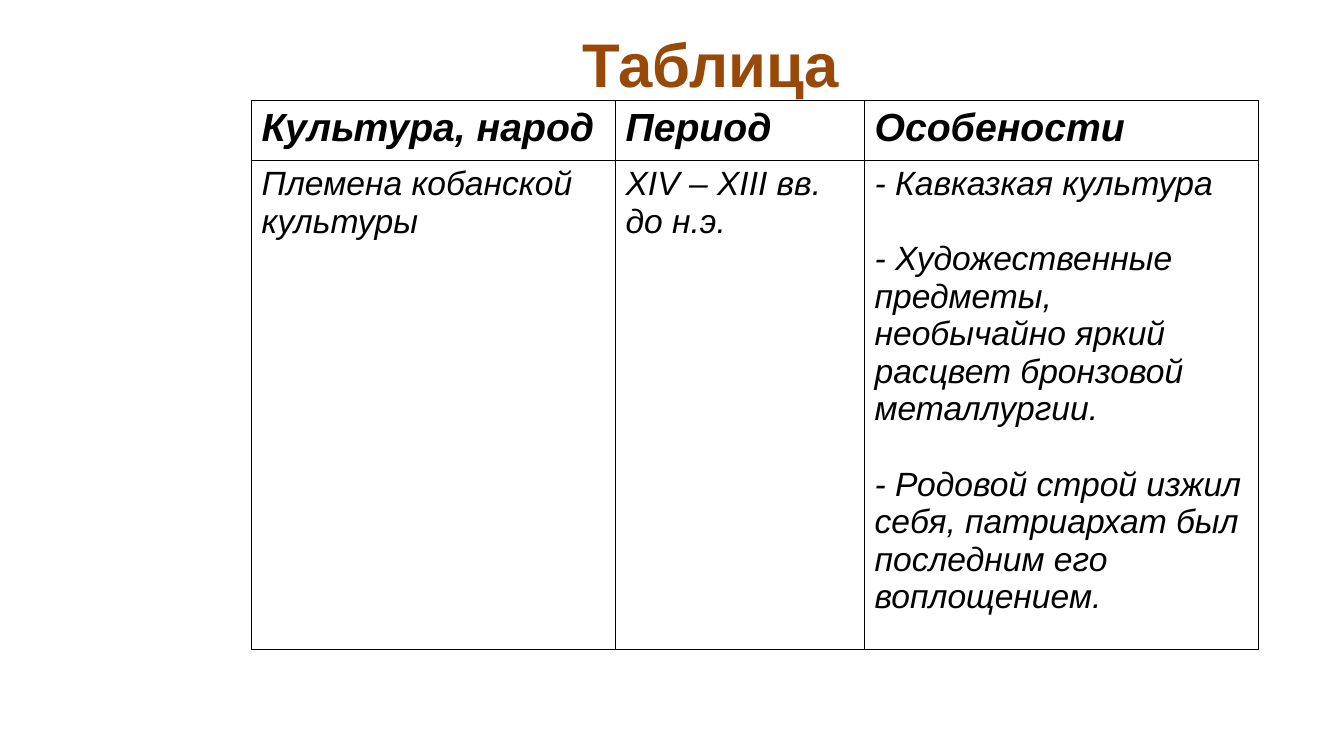
import pptx
import pptx.dml.color
import pptx.enum.text
import pptx.oxml.ns
import pptx.util
from lxml import etree

BLACK = pptx.dml.color.RGBColor(0x00, 0x00, 0x00)
BROWN = pptx.dml.color.RGBColor(0x98, 0x48, 0x07)

HEADERS = ["Культура, народ", "Период", "Особености"]
CULTURES = [
    [
        ["Племена кобанской культуры"],
        ["XIV – XIII вв. до н.э."],
        [
            "- Кавказкая культура",
            "- Художественные предметы, необычайно яркий расцвет бронзовой металлургии.",
            "- Родовой строй изжил себя, патриархат был последним его воплощением.",
        ],
    ],
]


class CultureSlide:
    font_name = "Arial"
    title_size = 44
    header_size = 28
    body_size = 24
    paragraph_gap = 27
    border_width = 1

    def __init__(self, presentation):
        self.width = presentation.slide_width
        self.height = presentation.slide_height
        self.slide = presentation.slides.add_slide(presentation.slide_layouts[6])

    def across(self, share):
        return round(self.width * share / 100)

    def down(self, share):
        return round(self.height * share / 100)

    def fill_text(self, text_frame, lines, size, color, bold=False, italic=False):
        text_frame.text = "\n".join(lines)
        for position, paragraph in enumerate(text_frame.paragraphs):
            if position:
                paragraph.space_before = pptx.util.Pt(self.paragraph_gap)
            for run in paragraph.runs:
                run.font.name = self.font_name
                run.font.size = pptx.util.Pt(size)
                run.font.bold = bold
                run.font.italic = italic
                run.font.color.rgb = color

    def title(self, text, left, top, width, height):
        box = self.slide.shapes.add_textbox(
            self.across(left), self.down(top), self.across(width), self.down(height)
        )
        text_frame = box.text_frame
        text_frame.word_wrap = True
        text_frame.vertical_anchor = pptx.enum.text.MSO_ANCHOR.MIDDLE
        self.fill_text(text_frame, [text], self.title_size, BROWN, bold=True)
        text_frame.paragraphs[0].alignment = pptx.enum.text.PP_ALIGN.CENTER

    def border(self, cell):
        qualified = pptx.oxml.ns.qn
        properties = cell._tc.get_or_add_tcPr()
        for side in ("a:lnL", "a:lnR", "a:lnT", "a:lnB"):
            line = etree.SubElement(properties, qualified(side))
            line.set("w", str(pptx.util.Pt(self.border_width)))
            fill = etree.SubElement(line, qualified("a:solidFill"))
            etree.SubElement(fill, qualified("a:srgbClr")).set("val", str(BLACK))

    def table(self, headers, records, left, top, column_shares, row_shares):
        rows = [[[header] for header in headers], *records]
        table = self.slide.shapes.add_table(
            len(rows),
            len(headers),
            self.across(left),
            self.down(top),
            self.across(sum(column_shares)),
            self.down(sum(row_shares)),
        ).table
        for column, share in zip(table.columns, column_shares):
            column.width = self.across(share)
        for row, share in zip(table.rows, row_shares):
            row.height = self.down(share)
        for row_number, row in enumerate(rows):
            is_header = row_number == 0
            size = self.header_size if is_header else self.body_size
            for column_number, lines in enumerate(row):
                cell = table.cell(row_number, column_number)
                self.border(cell)
                cell.fill.background()
                self.fill_text(cell.text_frame, lines, size, BLACK, is_header, True)


def main():
    presentation = pptx.Presentation()
    presentation.slide_width = pptx.util.Inches(13.33)
    presentation.slide_height = pptx.util.Inches(7.5)

    culture_slide = CultureSlide(presentation)
    culture_slide.title("Таблица", 11.48, 0, 82.82, 16.67)
    culture_slide.table(
        HEADERS, CULTURES, 18.72, 13.33, [27.08, 18.53, 29.33], [7.87, 60.67]
    )
    presentation.save("out.pptx")


if __name__ == "__main__":
    main()
